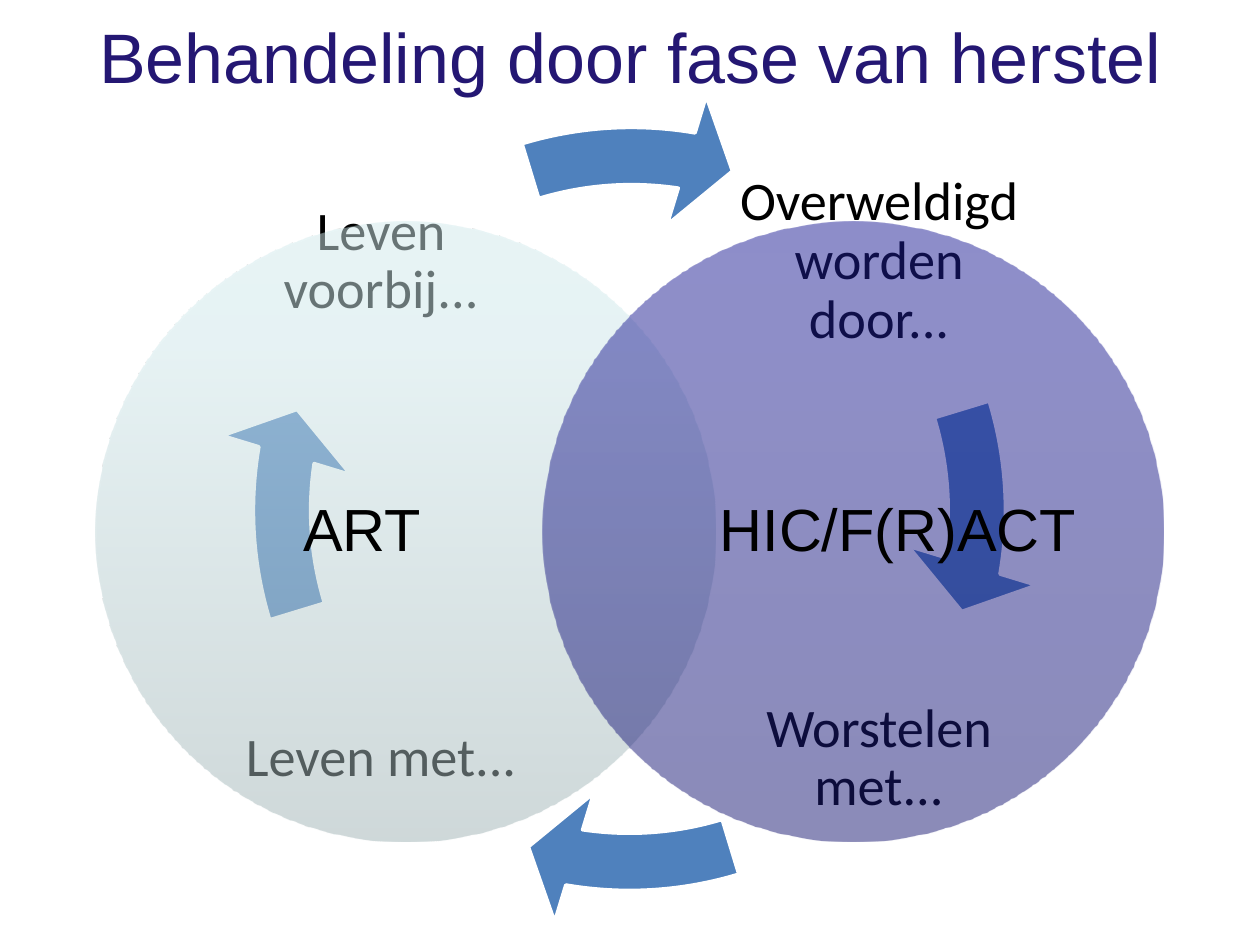
from lxml import etree
from pptx import Presentation
from pptx import util as u
from pptx.dml.color import RGBColor
from pptx.enum import shapes, text
from pptx.oxml.ns import qn

SCALE = 914400 / 126  # EMU in one px


def px(n):
    return u.Emu(round(n * SCALE))


def hue(code):
    return RGBColor.from_string(code)


class Deck:
    ink, arrow, edge = "000000", "4F81BD", "FFFFFF"

    def __init__(self, wide, high):
        self.prs = Presentation()
        self.prs.slide_width, self.prs.slide_height = px(wide), px(high)
        self.slide = self.prs.slides.add_slide(self.prs.slide_layouts[6])

    def label(self, words, box, size, font="Arial", color=ink, pad=0, lead=0.9):
        frame = self.slide.shapes.add_textbox(*map(px, box)).text_frame
        form = {"word_wrap": True, "vertical_anchor": text.MSO_ANCHOR.MIDDLE}
        for side in ("left", "right", "top", "bottom"):
            form["margin_" + side] = px(pad)
        for name, value in form.items():
            setattr(frame, name, value)
        para = frame.paragraphs[0]
        para.text = words
        para.alignment = text.PP_ALIGN.CENTER
        para.line_spacing = lead
        face = {"name": font, "size": u.Pt(size)}
        for name, value in face.items():
            setattr(para.runs[0].font, name, value)
        para.runs[0].font.color.rgb = hue(color)

    def shape(self, kind, x, y, size):
        item = self.slide.shapes.add_shape(kind, *map(px, (x, y, size, size)))
        item.shadow.inherit = False
        return item

    def curve(self, x, y, size, turn):
        item = self.shape(shapes.MSO_SHAPE.CIRCULAR_ARROW, x, y, size)
        # Angles count 216 to a full circle
        values = (0.069, 4.654, 5.49 + turn, (205.855 + turn) % 216, 0.081)
        for i, value in enumerate(values):
            item.adjustments[i] = value
        item.fill.solid()
        item.fill.fore_color.rgb = hue(self.arrow)
        item.line.color.rgb = hue(self.edge)
        item.line.width = u.Pt(2)

    def disc(self, x, y, size, tones):
        item = self.shape(shapes.MSO_SHAPE.OVAL, x, y, size)
        item.line.fill.background()
        item.fill.gradient()
        item.fill.gradient_angle = 90
        # Three half-transparent stops, from bottom to top
        stops = item._element.spPr.find(qn("a:gradFill")).find(qn("a:gsLst"))
        for old in list(stops):
            stops.remove(old)
        for spot, tone in zip((0, 80, 100), tones):
            stop = etree.SubElement(stops, qn("a:gs"), pos=str(spot * 1000))
            color = etree.SubElement(stop, qn("a:srgbClr"), val=tone)
            etree.SubElement(color, qn("a:alpha"), val="50000")


def main():
    deck = Deck(1260, 945)

    # Cycle of four phases, clockwise from top right
    left, right, top, low = 234, 732, 115, 612
    phases = (
        ("Overweldigd worden door...", right, top, 215, 96),
        ("Worstelen met...", right, low, 215, 100),
        ("Leven met...", left, low, 215, 96),
        ("Leven voorbij...", left, top, 217, 89),
    )
    for i, (words, x, y, ax, ay) in enumerate(phases):
        deck.label(words, (x, y, 294, 294), 31, font="Calibri", pad=5)
        deck.curve(ax, ay, 829, i * 54)

    # Title
    deck.label("Behandeling door fase van herstel", (63, -23, 1134, 158), 40,
               color="241773", lead=1.0)

    # Overlapping circles of care
    circles = (
        ("ART", 96, 183, ("A0B3B5", "D0E8EB", "D1EAEC")),
        ("HIC/F(R)ACT", 543, 719, ("171771", "1E1E93", "1C1C96")),
    )
    for words, x, tx, tones in circles:
        deck.disc(x, 222, 620, tones)
        deck.label(words, (tx, 295, 358, 474), 34)

    deck.prs.save("out.pptx")


if __name__ == "__main__":
    main()
